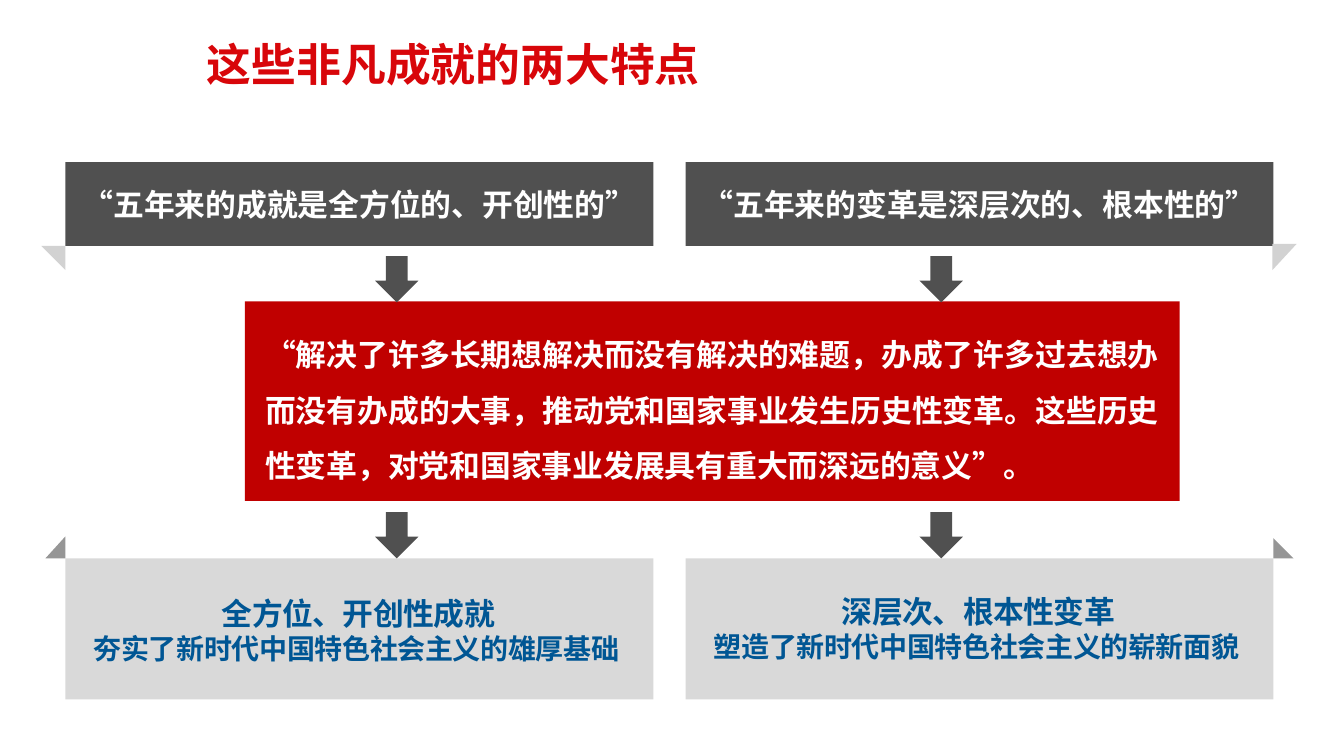
from lxml import etree
from pptx import Presentation
from pptx.dml.color import RGBColor
from pptx.enum.shapes import MSO_SHAPE
from pptx.enum.text import MSO_ANCHOR, PP_ALIGN
from pptx.oxml.ns import qn
from pptx.util import Inches, Pt

RECTANGLE, DOWN_ARROW = MSO_SHAPE.RECTANGLE, MSO_SHAPE.DOWN_ARROW
TOP, MIDDLE = MSO_ANCHOR.TOP, MSO_ANCHOR.MIDDLE
LEFT, CENTER, JUSTIFY = PP_ALIGN.LEFT, PP_ALIGN.CENTER, PP_ALIGN.JUSTIFY

CJK_FONT = "Noto Sans CJK SC"
WHITE, DARK, PALE = "FFFFFF", "505050", "D9D9D9"
TITLE_RED, PANEL_RED, BLUE = "D8060A", "C00000", "005694"
TOP_FOLD, BOTTOM_FOLD = "D2D2D2", "969696"

COLUMN_LEFTS = (0.65, 6.8)
COLUMN_WIDTH = 5.83
ARROW_LEFTS = (3.72, 9.12)
ARROW_TOPS = (2.54, 5.08)
HEADINGS = ("“五年来的成就是全方位的、开创性的”", "“五年来的变革是深层次的、根本性的”")
RESULTS = (
    ("全方位、开创性成就", "夯实了新时代中国特色社会主义的雄厚基础"),
    ("深层次、根本性变革", "塑造了新时代中国特色社会主义的崭新面貌"),
)
RESULT_TOPS = (5.71, 5.69)
STATEMENT = (
    "“解决了许多长期想解决而没有解决的难题，办成了许多过去想办而没有办成的大事，"
    "推动党和国家事业发生历史性变革。这些历史性变革，对党和国家事业发展具有重大而深远的意义”。"
)
FOLDS = (
    (((0.65, 2.44), (0.65, 2.68), (0.41, 2.44)), TOP_FOLD),
    (((12.62, 2.42), (12.62, 2.68), (12.86, 2.42)), TOP_FOLD),
    (((0.65, 5.54), (0.65, 5.32), (0.45, 5.54)), BOTTOM_FOLD),
    (((12.63, 5.54), (12.63, 5.34), (12.83, 5.54)), BOTTOM_FOLD),
)


def color(value):
    return RGBColor.from_string(value)


class Page:
    def __init__(self, deck):
        self.slide = deck.slides.add_slide(deck.slide_layouts[5])
        self.shapes = self.slide.shapes

    def paint(self, shape, fill):
        shape.shadow.inherit = False
        shape.fill.solid()
        shape.fill.fore_color.rgb = color(fill)
        shape.line.fill.background()
        return shape

    def block(self, kind, left, top, width, height, fill):
        shape = self.shapes.add_shape(
            kind, Inches(left), Inches(top), Inches(width), Inches(height))
        return self.paint(shape, fill)

    def fold(self, points, fill):
        """Draw a triangular ribbon end."""
        corners = [(Inches(x), Inches(y)) for x, y in points]
        builder = self.shapes.build_freeform(*corners[0])
        builder.add_line_segments(corners[1:], close=True)
        return self.paint(builder.convert_to_shape(), fill)

    def frame(self, shape, margins, anchor, wrap=True):
        """Set margins (left, top, right, bottom), anchor and wrapping."""
        frame = shape.text_frame
        frame.margin_left, frame.margin_top, frame.margin_right, frame.margin_bottom = map(
            Inches, margins)
        frame.vertical_anchor = anchor
        frame.word_wrap = wrap
        return frame

    def set_text(self, para, text, size, ink, align, font=CJK_FONT, line=1.0, spacing=0):
        para.text = text
        para.alignment = align
        para.line_spacing = line
        para.font.name = font
        para.font.size = Pt(size)
        para.font.bold = True
        para.font.color.rgb = color(ink)
        properties = para.font._element
        if spacing:
            properties.set("spc", str(spacing))
        etree.SubElement(properties, qn("a:ea")).set("typeface", CJK_FONT)

    def title(self, text):
        shape = self.shapes.title
        shape.left, shape.top = Inches(1.95), Inches(0.31)
        shape.width, shape.height = Inches(5.14), Inches(0.64)
        frame = self.frame(shape, (0.1, 0.05, 0.1, 0.05), TOP, wrap=False)
        self.set_text(frame.paragraphs[0], text, 32, TITLE_RED, LEFT)

    def heading(self, left, text):
        shape = self.block(RECTANGLE, left, 1.61, COLUMN_WIDTH, 0.83, DARK)
        frame = self.frame(shape, (0.1, 0.05, 0.1, 0.05), MIDDLE)
        self.set_text(frame.paragraphs[0], text, 22, WHITE, CENTER)

    def statement(self, text):
        shape = self.block(RECTANGLE, 2.43, 2.99, 9.27, 1.98, PANEL_RED)
        frame = self.frame(shape, (0.2, 0.16, 0.2, 0.16), TOP)
        para = frame.paragraphs[0]
        para.space_after = Pt(5.9)
        self.set_text(para, text, 22, WHITE, JUSTIFY, line=1.5)

    def result(self, left, top, headline, detail):
        self.block(RECTANGLE, left, 5.54, COLUMN_WIDTH, 1.4, PALE)
        box = self.shapes.add_textbox(
            Inches(left + 0.28), Inches(top), Inches(5.55), Inches(1.13))
        frame = self.frame(box, (0, 0, 0.3, 0.24), MIDDLE)
        self.set_text(frame.paragraphs[0], headline, 22, BLUE, CENTER, "Arial", 1.5, -30)
        self.set_text(frame.add_paragraph(), detail, 20, BLUE, JUSTIFY, "Arial", 1.0, -30)


def main():
    deck = Presentation()
    deck.slide_width, deck.slide_height = Inches(13.33), Inches(7.5)
    page = Page(deck)
    page.title("这些非凡成就的两大特点")
    for left, heading, top, result in zip(COLUMN_LEFTS, HEADINGS, RESULT_TOPS, RESULTS):
        page.heading(left, heading)
        page.result(left, top, *result)
    page.statement(STATEMENT)
    for points, fill in FOLDS:
        page.fold(points, fill)
    for top in ARROW_TOPS:
        for left in ARROW_LEFTS:
            page.block(DOWN_ARROW, left, top, 0.43, 0.46, DARK)
    deck.save("out.pptx")


if __name__ == "__main__":
    main()
